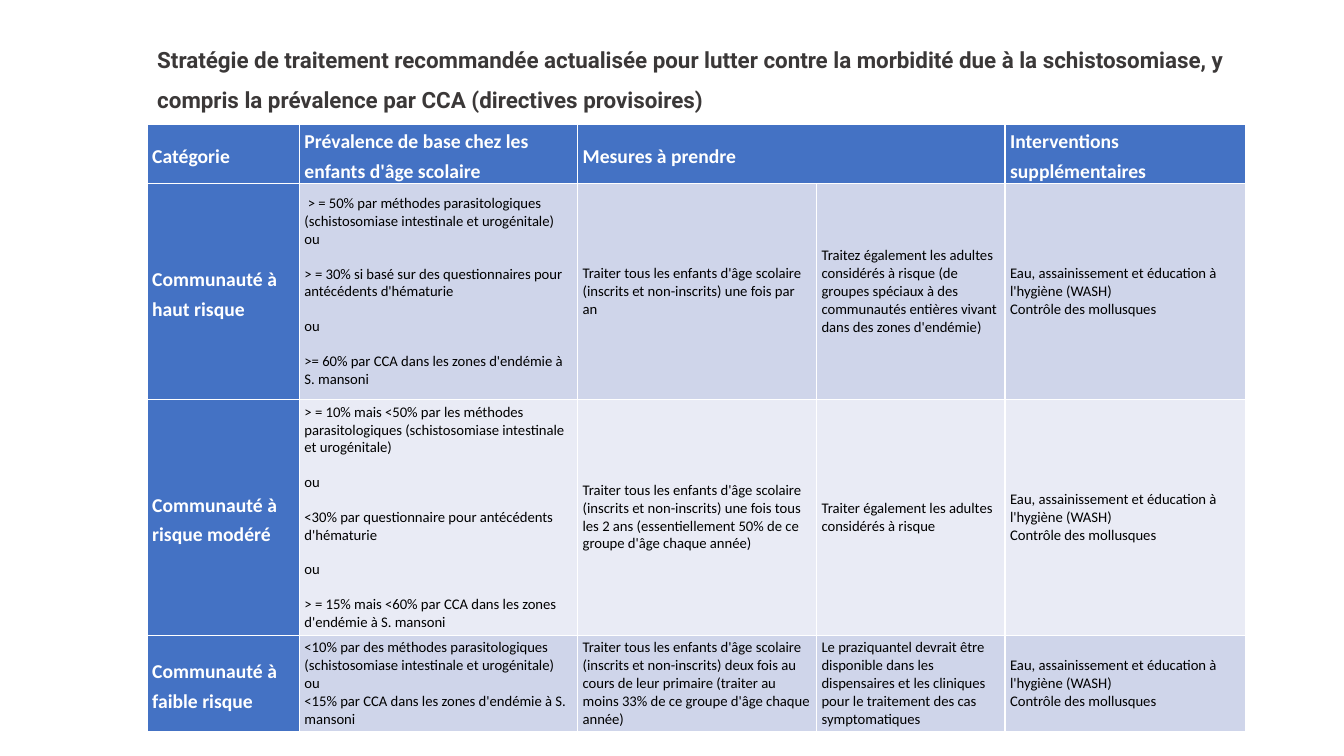
from pptx import Presentation
from pptx import util as u
from pptx.dml.color import RGBColor
from pptx.enum import text

WHITE = RGBColor(0xFF, 0xFF, 0xFF)
BLACK = RGBColor(0, 0, 0)
CHARCOAL = RGBColor(0x3B, 0x38, 0x38)
BLUE = RGBColor(0x44, 0x72, 0xC4)
BANDS = RGBColor(0xCF, 0xD5, 0xEA), RGBColor(0xE9, 0xEB, 0xF5)

TITLE = ("Stratégie de traitement recommandée actualisée pour lutter contre la morbidité "
         "due à la schistosomiase, y compris la prévalence par CCA (directives provisoires)")
WASH = "Eau, assainissement et éducation à l'hygiène (WASH)\vContrôle des mollusques"
CHILDREN = "Traiter tous les enfants d'âge scolaire (inscrits et non-inscrits) "
HEADER = ["Catégorie", "Prévalence de base chez les enfants d'âge scolaire",
          "Mesures à prendre", "", "Interventions supplémentaires"]
RISKS = [
    ["Communauté à haut risque",
     " > = 50% par méthodes parasitologiques (schistosomiase intestinale et urogénitale) ou\n"
     "> = 30% si basé sur des questionnaires pour antécédents d'hématurie\n"
     "ou\n"
     ">= 60% par CCA dans les zones d'endémie à S. mansoni",
     CHILDREN + "une fois par an",
     "Traitez également les adultes considérés à risque (de groupes spéciaux à des "
     "communautés entières vivant dans des zones d'endémie)",
     WASH],
    ["Communauté à risque modéré",
     "> = 10% mais <50% par les méthodes parasitologiques (schistosomiase intestinale "
     "et urogénitale)\n"
     "ou\n"
     "<30% par questionnaire pour antécédents d'hématurie\n"
     "ou\n"
     "> = 15% mais <60% par CCA dans les zones d'endémie à S. mansoni",
     CHILDREN + "une fois tous les 2 ans (essentiellement 50% de ce groupe d'âge chaque année)",
     "Traiter également les adultes considérés à risque",
     WASH],
    ["Communauté à faible risque",
     "<10% par des méthodes parasitologiques (schistosomiase intestinale et urogénitale)\v"
     "ou\v"
     "<15% par CCA dans les zones d'endémie à S. mansoni",
     CHILDREN + "deux fois au cours de leur primaire (traiter au moins 33% de ce groupe "
     "d'âge chaque année)",
     "Le praziquantel devrait être disponible dans les dispensaires et les cliniques "
     "pour le traitement des cas symptomatiques",
     WASH],
]


class Deck:
    """Builds slides on a grid of 100 columns by 100 rows in one text style."""

    def __init__(self, width, height):
        self.prs = Presentation()
        self.prs.slide_width, self.prs.slide_height = u.Inches(width), u.Inches(height)
        self.slide = self.prs.slides.add_slide(self.prs.slide_layouts[5])

    def x(self, columns):
        return round(self.prs.slide_width * columns / 100)

    def y(self, rows):
        return round(self.prs.slide_height * rows / 100)

    def fill_text(self, tf, content, font, size, color, bold, spacing=1.0):
        tf.text = content
        tf.word_wrap = True
        for i, p in enumerate(tf.paragraphs):
            p.alignment = text.PP_ALIGN.LEFT
            p.line_spacing = spacing
            p.space_before = u.Pt(6 if i else 0)
            p.space_after = u.Pt(6)
            for r in p.runs:
                r.font.name, r.font.size, r.font.bold = font, u.Pt(size), bold
                r.font.color.rgb = color

    def title(self, content, left, top, width, height):
        sp = self.slide.shapes.title
        sp.left, sp.top = self.x(left), self.y(top)
        sp.width, sp.height = self.x(width), self.y(height)
        tf = sp.text_frame
        self.fill_text(tf, content, "Roboto", 16, CHARCOAL, True, 1.5)
        tf.auto_size = text.MSO_AUTO_SIZE.NONE
        tf.vertical_anchor = text.MSO_ANCHOR.TOP

    def table(self, rows, left, top, widths, heights):
        frame = self.slide.shapes.add_table(
            len(rows), len(widths), self.x(left), self.y(top),
            self.x(sum(widths)), self.y(sum(heights)))
        table = frame.table
        table.first_col = True
        for column, width in zip(table.columns, widths):
            column.width = self.x(width)
        for row, height in zip(table.rows, heights):
            row.height = self.y(height)
        for i, row in enumerate(rows):
            for j, content in enumerate(row):
                self.cell(table.cell(i, j), content, i == 0 or j == 0, BANDS[(i + 1) % 2])
        return table

    def cell(self, cell, content, heading, band):
        cell.margin_left = cell.margin_right = u.Inches(0.05)
        cell.margin_top = cell.margin_bottom = 0
        cell.vertical_anchor = text.MSO_ANCHOR.MIDDLE
        cell.fill.solid()
        cell.fill.fore_color.rgb = BLUE if heading else band
        style = (14, WHITE, True, 1.25) if heading else (10.5, BLACK, False)
        self.fill_text(cell.text_frame, content, "Calibri", *style)


def main():
    deck = Deck(13.33, 7.5)
    deck.title(TITLE, 10.95, 3.6, 83, 12.5)
    table = deck.table([HEADER] + RISKS, 10.95, 16.4,
                       widths=[11.33, 20.7, 17.78, 14.03, 17.93],
                       heights=[7.07, 28.53, 31.2, 12.8])
    table.cell(0, 2).merge(table.cell(0, 3))
    deck.prs.save("out.pptx")


if __name__ == "__main__":
    main()
